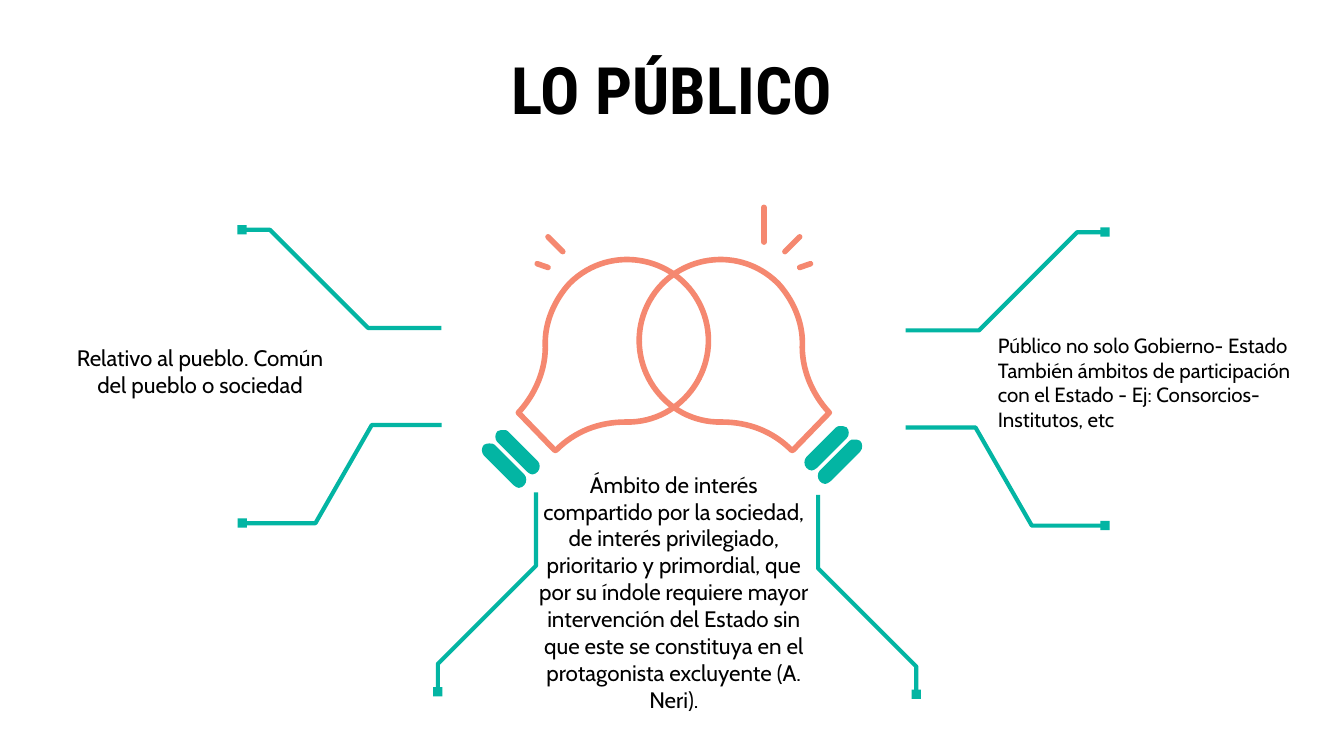
from pptx import Presentation
from pptx.dml.color import RGBColor
from pptx.enum.shapes import MSO_CONNECTOR, MSO_SHAPE
from pptx.enum.text import MSO_ANCHOR, PP_ALIGN
from pptx.oxml.ns import qn
from pptx.util import Pt
from lxml import etree

STRAIGHT = MSO_CONNECTOR.STRAIGHT
SQUARE = MSO_SHAPE.RECTANGLE
TOP, MIDDLE = MSO_ANCHOR.TOP, MSO_ANCHOR.MIDDLE
LEFT, CENTER = PP_ALIGN.LEFT, PP_ALIGN.CENTER

TEAL, CORAL, BLACK = "03B5A3", "F58870", "000000"

# Leader lines: the run before the first bend, at the second bend and at the end
DIAGONAL, STEEP = (39.3, 91.9, 106.8), (37.4, 67.6, 106.8)
MARKER = 5

# Outlines: a start point, then line ends (1 point) or Bézier curves (3 points)
BULB = [
    [(159.1, 41)],
    [(136.8, 18.7), (99.4, 26.6), (87.8, 55.4)],
    [(76.3, 84.2), (97.9, 115.9), (128.9, 115.2)],
    [(143.3, 115.2), (156.2, 120.2), (166.3, 130.3)],
    [(167, 130.3)], [(186.5, 110.2)],
    [(177.1, 100.1), (171.4, 86.4), (172.1, 72.7)],
    [(172.1, 61.2), (167, 49.7), (159.1, 41)],
]
THREAD = [
    [(20.2, 0)],
    [(18.7, 0), (18, 0), (17.3, 0.7)], [(1.4, 16.6)],
    [(0, 18), (0, 20.9), (1.4, 22.3)],
    [(2.2, 23), (2.9, 23.8), (4.3, 23.8)],
    [(5, 23.8), (6.5, 23), (7.2, 22.3)], [(23, 6.5)],
    [(24.5, 5), (24.5, 2.2), (23, 0.7)],
    [(21.6, 0), (20.9, 0), (20.2, 0)],
]
THREAD_WIDTH = 24.5
SIDE_RAYS = [[(170.6, 32.4), (176.4, 30.4)], [(162.7, 23.9), (170.6, 16)]]
TOP_RAY = [(151.4, 18.8), (151.4, 0.2)]


def colour(value):
    return RGBColor.from_string(value)


def paint(shape, fill=None, line=None, width=0):
    shape.shadow.inherit = False
    for part, value in ((shape.fill, fill), (shape.line.fill, line)):
        if value:
            part.solid()
            part.fore_color.rgb = colour(value)
        else:
            part.background()
    if line:
        shape.line.width = Pt(width)


def round_ends(shape):
    stroke = shape.element.spPr.find(qn("a:ln"))
    stroke.set("cap", "rnd")
    etree.SubElement(stroke, qn("a:round"))


def place(points, left, top, mirror_width=None):
    return [(left + (x if mirror_width is None else mirror_width - x), top + y)
            for x, y in points]


def add_outline(slide, segments, close):
    (start,), *rest = [[(Pt(x), Pt(y)) for x, y in segment] for segment in segments]
    builder = slide.shapes.build_freeform(*start)
    builder.add_line_segments([point for segment in rest for point in segment], close=close)
    shape = builder.convert_to_shape()
    # Join the three line steps of each curve into one Bézier step
    steps = iter(list(shape.element.spPr.iter(qn("a:lnTo"))))
    for segment in rest:
        group = [next(steps) for _ in segment]
        if len(group) == 3:
            curve = etree.Element(qn("a:cubicBezTo"))
            group[0].addprevious(curve)
            for step in group:
                curve.append(step[0])
                step.getparent().remove(step)
    return shape


def add_leader(slide, box, bends, flip_x=False, flip_y=False, upright=False):
    left, top, width, height = box
    rise = width if upright else height
    points = list(zip((0, *bends), (0, 0, rise, rise)))
    if upright:
        points = [(y, x) for x, y in points]
    points = [(left + (width - x if flip_x else x), top + (height - y if flip_y else y))
              for x, y in points]
    paint(add_outline(slide, [[point] for point in points], False), line=TEAL, width=2.25)
    # Square marker at the outer end
    end_x, end_y = points[-1]
    marker = slide.shapes.add_shape(SQUARE, Pt(end_x - MARKER / 2), Pt(end_y - MARKER / 2),
                                    Pt(MARKER), Pt(MARKER))
    paint(marker, fill=TEAL)


def add_ray(slide, start, end):
    ray = slide.shapes.add_connector(STRAIGHT, *(Pt(v) for v in (*start, *end)))
    ray.line.color.rgb = colour(CORAL)
    ray.line.width = Pt(3)
    round_ends(ray)
    etree.SubElement(ray.element.spPr, qn("a:effectLst"))


def add_bulbs(slide, box):
    left, top, width, _ = box
    # Screw threads
    for mirror_width, x, y in ((None, 172.8, 117.4), (None, 180, 124.6),
                               (THREAD_WIDTH, 7.2, 119.5), (THREAD_WIDTH, 0, 126.7)):
        thread = [place(segment, left + x, top + y, mirror_width) for segment in THREAD]
        paint(add_outline(slide, thread, True), fill=TEAL)
    # Glass and rays, once for each side
    for mirror_width in (width, None):
        glass = [place(segment, left, top, mirror_width) for segment in BULB]
        bulb = add_outline(slide, glass, True)
        paint(bulb, line=CORAL, width=3)
        round_ends(bulb)
        for ray in SIDE_RAYS:
            add_ray(slide, *place(ray, left, top, mirror_width))
    add_ray(slide, *place(TOP_RAY, left, top))


def write(shape, paragraphs, align, font, frame_format):
    frame = shape.text_frame
    margins = dict.fromkeys(("margin_left", "margin_right", "margin_top", "margin_bottom"),
                            Pt(7.2))
    for name, value in {"word_wrap": True, **margins, **frame_format}.items():
        setattr(frame, name, value)
    for index, text in enumerate(paragraphs):
        paragraph = frame.paragraphs[0] if index == 0 else frame.add_paragraph()
        paragraph.alignment = align
        run = paragraph.add_run()
        run.text = text
        for name, value in font.items():
            setattr(run.font, name, value)
        run.font.color.rgb = colour(BLACK)


def add_title(slide, box, text):
    title = slide.shapes.title
    title.left, title.top, title.width, title.height = map(Pt, box)
    write(title, [text], CENTER, {"name": "Roboto Condensed", "size": Pt(35), "bold": True},
          {"vertical_anchor": MIDDLE})


def add_note(slide, box, paragraphs, size=12, align=CENTER, **frame_format):
    note = slide.shapes.add_textbox(*map(Pt, box))
    write(note, paragraphs, align, {"name": "Cabin", "size": Pt(size)},
          {"vertical_anchor": MIDDLE, **frame_format})


def main():
    deck = Presentation()
    deck.slide_width, deck.slide_height = Pt(720), Pt(405)
    slide = deck.slides.add_slide(deck.slide_layouts[5])
    add_title(slide, (24.5, 26.3, 671, 42.5), "LO PÚBLICO")

    # Leader lines: left, right and bottom pairs
    add_leader(slide, (129.7, 123.1, 106.8, 52.6), DIAGONAL, flip_x=True, flip_y=True)
    add_leader(slide, (129.8, 227.7, 106.8, 52.6), STEEP, flip_x=True)
    add_leader(slide, (485.2, 124.4, 106.8, 52.6), DIAGONAL, flip_y=True)
    add_leader(slide, (485.2, 229, 106.8, 52.6), STEEP)
    add_leader(slide, (438.3, 265.2, 52.6, 106.8), DIAGONAL, upright=True)
    add_leader(slide, (234.6, 263.8, 52.6, 106.8), DIAGONAL, flip_x=True, upright=True)

    add_bulbs(slide, (257.8, 110.9, 206.4, 150.5))

    # Notes
    add_note(slide, (27.7, 180.7, 159.1, 64.8),
             ["Relativo al pueblo. Común del pueblo o sociedad"],
             vertical_anchor=TOP, margin_top=Pt(3.6))
    add_note(slide, (527.5, 162.8, 189.4, 84.2),
             ["Público no solo Gobierno- Estado",
              "También ámbitos de participación con el Estado - Ej: Consorcios- Institutos, etc"],
             size=11, align=LEFT)
    add_note(slide, (280.4, 246.8, 161.3, 140.4),
             ["Ámbito de interés compartido por la sociedad, de interés privilegiado, "
              "prioritario y primordial, que por su índole requiere mayor intervención del "
              "Estado sin que este se constituya en el protagonista excluyente (A. Neri)."])
    deck.save("out.pptx")


if __name__ == "__main__":
    main()
